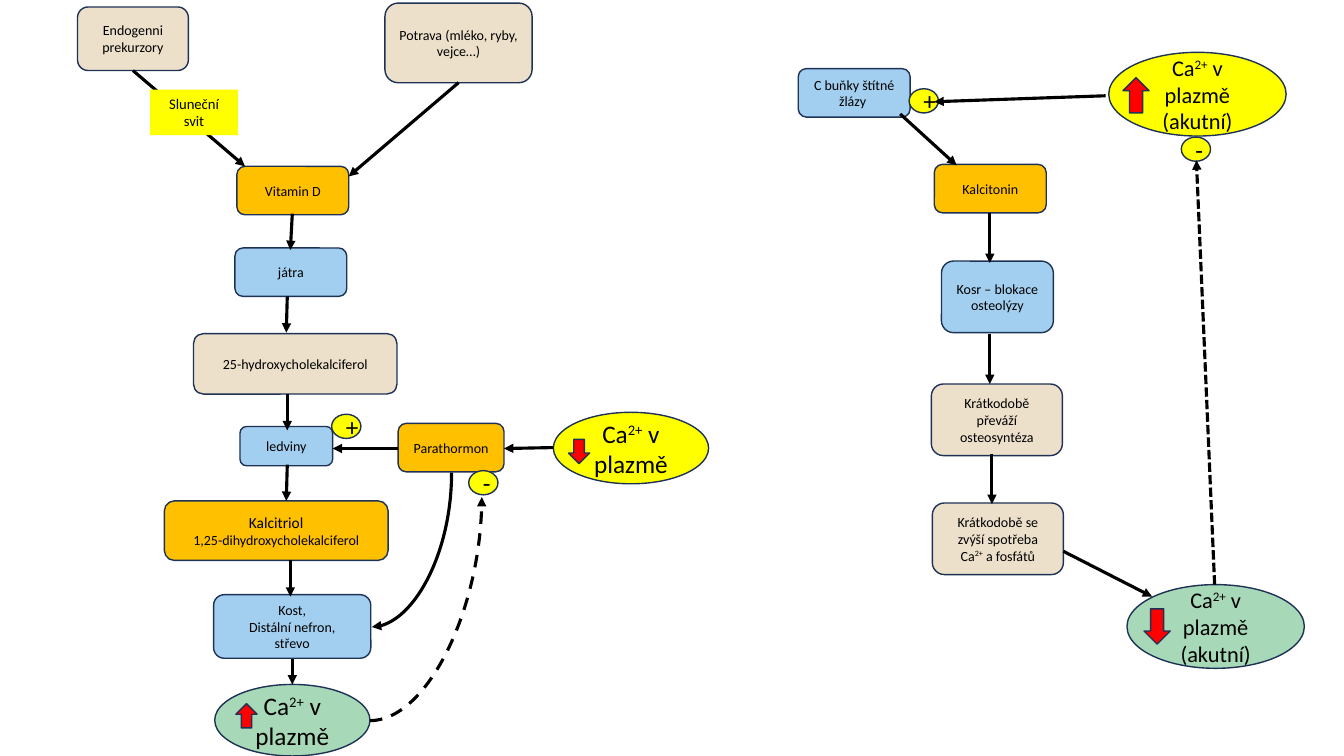
from typing import NamedTuple

from lxml import etree
from pptx import Presentation
from pptx.dml.color import RGBColor
from pptx.enum.dml import MSO_LINE
from pptx.enum.shapes import MSO_CONNECTOR, MSO_SHAPE
from pptx.enum.text import MSO_ANCHOR, PP_ALIGN
from pptx.oxml.ns import qn
from pptx.util import Pt

ROUNDED, OVAL = MSO_SHAPE.ROUNDED_RECTANGLE, MSO_SHAPE.OVAL
RECT, DOWN_ARROW = MSO_SHAPE.RECTANGLE, MSO_SHAPE.DOWN_ARROW
STRAIGHT, CURVE = MSO_CONNECTOR.STRAIGHT, MSO_CONNECTOR.CURVE
DASH, SHORT_DASH = MSO_LINE.DASH, MSO_LINE.SQUARE_DOT
CENTER, MIDDLE, TOP = PP_ALIGN.CENTER, MSO_ANCHOR.MIDDLE, MSO_ANCHOR.TOP

FONT = "Calibri"
BLACK, OUTLINE, RED = "000000", "1E3256", "FF0000"
SUBSTANCE, HORMONE, ORGAN = "ECE0CB", "FFC000", "A2CFEF"
STIMULUS, RESULT = "FFFF00", "A7D8B7"


class Box(NamedTuple):
    text: str
    fill: str
    left: float
    top: float
    width: float = 79.9
    height: float = 34.6
    sizes: tuple = (10,)


class CalciumLevel(NamedTuple):
    text: str
    fill: str
    left: float
    top: float
    width: float
    height: float
    size: float
    arrow: tuple  # left, top, width, height
    rising: bool


class Badge(NamedTuple):
    sign: str
    left: float
    top: float


class Arrow(NamedTuple):
    x1: float
    y1: float
    x2: float
    y2: float
    dash: object = None
    curved: bool = False
    rotation: int = 0


# Lengths in points; text between carets is superscript
BOXES = [
    Box("Endogenni\nprekurzory", SUBSTANCE, 55.4, 5, 79.2, 45.4),
    Box("Potrava (mléko, ryby, vejce…)", SUBSTANCE, 275, 2.2, 105.1, 56.9),
    Box("Vitamin D", HORMONE, 169.2, 118.8),
    Box("játra", ORGAN, 167.8, 177.1),
    Box("25-hydroxycholekalciferol", SUBSTANCE, 138.2, 238.3, 145.4, 43.2),
    Box("ledviny", ORGAN, 171.4, 304.6, 66.2, 28.1),
    Box("Parathormon", HORMONE, 284.4, 302.4, 75.6),
    Box("Kalcitriol\n1,25-dihydroxycholekalciferol", HORMONE,
        117.4, 357.8, 159.8, 42.5, (11, 10)),
    Box("Kost,\nDistální nefron,\nstřevo", ORGAN, 152.6, 424.8, 112.3, 45.4),
    Box("Kalcitonin", HORMONE, 667.4, 117.4),
    Box("C buňky štítné žlázy ", ORGAN, 570.2, 49),
    Box("Kosr – blokace osteolýzy", ORGAN, 672.5, 186.5, height=51.1),
    Box("Krátkodobě převáží osteosyntéza", SUBSTANCE, 665.3, 274.3, 93.6, 51.1),
    Box("Krátkodobě se zvýší spotřeba Ca^2+^ a fosfátů", SUBSTANCE,
        666, 359.3, 93.6, 51.1),
]

CALCIUM = "Ca^2+^ v plazmě"
ACUTE = CALCIUM + "\n(akutní)"
CALCIUM_LEVELS = [
    CalciumLevel(CALCIUM, RESULT, 153.4, 488.9, 110.9, 51.1, 18,
                 (168.5, 502.6, 15.1, 17.3), True),
    CalciumLevel(CALCIUM, STIMULUS, 395.3, 294.5, 110.9, 51.1, 18,
                 (406.1, 313.9, 15.1, 17.3), False),
    CalciumLevel(ACUTE, STIMULUS, 792, 37.4, 126.7, 59.8, 16,
                 (802.1, 55.4, 18.7, 25.2), True),
    CalciumLevel(ACUTE, RESULT, 805, 417.6, 126.7, 59.8, 16,
                 (817.2, 434.9, 18.7, 25.2), False),
]

BADGES = [
    Badge("+", 236.9, 295.9), Badge("-", 334.8, 336.2),
    Badge("+", 649.4, 63.4), Badge("-", 843.8, 97.9),
]

ARROWS = [
    # Vitamin D pathway
    Arrow(95, 50.4, 175, 118.8),
    Arrow(327.6, 59, 249.1, 126),
    Arrow(208.8, 152.6, 207.4, 178.6),
    Arrow(205.2, 211.7, 204.5, 237.6),
    Arrow(205.2, 281.5, 205.2, 307.4),
    Arrow(205.2, 331.9, 204.5, 357.8),
    Arrow(207.4, 400.3, 207.4, 426.2),
    Arrow(208.8, 470.9, 208.8, 488.9),
    # Parathormone regulation
    Arrow(395.3, 319.7, 360, 320.4),
    Arrow(284.4, 320.4, 237.6, 320.4),
    Arrow(239, 364.3, 349.2, 421.2, curved=True, rotation=90),
    Arrow(264.2, 514.8, 344.2, 355, DASH, curved=True),
    # Calcitonin pathway
    Arrow(643, 81.4, 683.3, 118.1),
    Arrow(789.8, 68.4, 667.4, 72.7),
    Arrow(707, 151.9, 707, 187.9),
    Arrow(707, 238.3, 707, 274.3),
    Arrow(708.5, 324, 708.5, 360),
    Arrow(759.6, 393.8, 823, 426.2),
    Arrow(867.6, 417.6, 854.6, 114.5, SHORT_DASH),
]


def color(hex_code: str) -> RGBColor:
    return RGBColor.from_string(hex_code)


def write(shape, text: str, *, sizes: tuple = (10,), anchor=MIDDLE) -> None:
    """Write one paragraph per line; the last size serves all further lines."""
    frame = shape.text_frame
    frame.word_wrap = True
    frame.vertical_anchor = anchor
    for index, line in enumerate(text.split("\n")):
        paragraph = frame.add_paragraph() if index else frame.paragraphs[0]
        paragraph.alignment = CENTER
        for part, piece in enumerate(line.split("^")):
            run = paragraph.add_run()
            run.text = piece
            run.font.name = FONT
            run.font.size = Pt(sizes[min(index, len(sizes) - 1)])
            run.font.color.rgb = color(BLACK)
            if part % 2:
                run.font._element.set("baseline", "30000")


def add_filled(slide, kind, fill: str, left: float, top: float,
               width: float, height: float, outlined: bool = True):
    shape = slide.shapes.add_shape(kind, Pt(left), Pt(top), Pt(width), Pt(height))
    shape.shadow.inherit = False
    shape.fill.solid()
    shape.fill.fore_color.rgb = color(fill)
    if outlined:
        shape.line.color.rgb = color(OUTLINE)
        shape.line.width = Pt(1)
    else:
        shape.line.fill.background()
    return shape


def add_level(slide, level: CalciumLevel) -> None:
    oval = add_filled(slide, OVAL, level.fill, *level[2:6])
    write(oval, level.text, sizes=(level.size,))
    trend = add_filled(slide, DOWN_ARROW, RED, *level.arrow)
    trend.rotation = 180 if level.rising else 0


def add_arrow(slide, arrow: Arrow) -> None:
    connector = slide.shapes.add_connector(
        CURVE if arrow.curved else STRAIGHT, *(Pt(value) for value in arrow[:4]))
    connector.line.color.rgb = color(BLACK)
    connector.line.width = Pt(2.25)
    if arrow.dash is not None:
        connector.line.dash_style = arrow.dash
    properties = connector._element.spPr
    etree.SubElement(properties.find(qn("a:ln")), qn("a:tailEnd"), type="triangle")
    etree.SubElement(properties, qn("a:effectLst"))
    if arrow.curved:
        properties.find(qn("a:prstGeom")).set("prst", "curvedConnector2")
    if arrow.rotation:
        properties.find(qn("a:xfrm")).set("rot", str(arrow.rotation * 60000))


def main() -> None:
    presentation = Presentation()
    presentation.slide_width, presentation.slide_height = Pt(960), Pt(540)
    slide = presentation.slides.add_slide(presentation.slide_layouts[6])

    for box in BOXES:
        write(add_filled(slide, ROUNDED, *box[1:6]), box.text, sizes=box.sizes)
    for level in CALCIUM_LEVELS:
        add_level(slide, level)
    for badge in BADGES:
        oval = add_filled(slide, OVAL, STIMULUS, badge.left, badge.top, 20.9, 17.3)
        write(oval, badge.sign, sizes=(18,))
    for arrow in ARROWS:
        add_arrow(slide, arrow)

    # Sunlight label covers the arrow from the precursors
    sunlight = add_filled(slide, RECT, STIMULUS, 107.3, 64.1, 62.6, 32.4, outlined=False)
    write(sunlight, "Sluneční svit", sizes=(10.5,), anchor=TOP)

    presentation.save("out.pptx")


if __name__ == "__main__":
    main()
